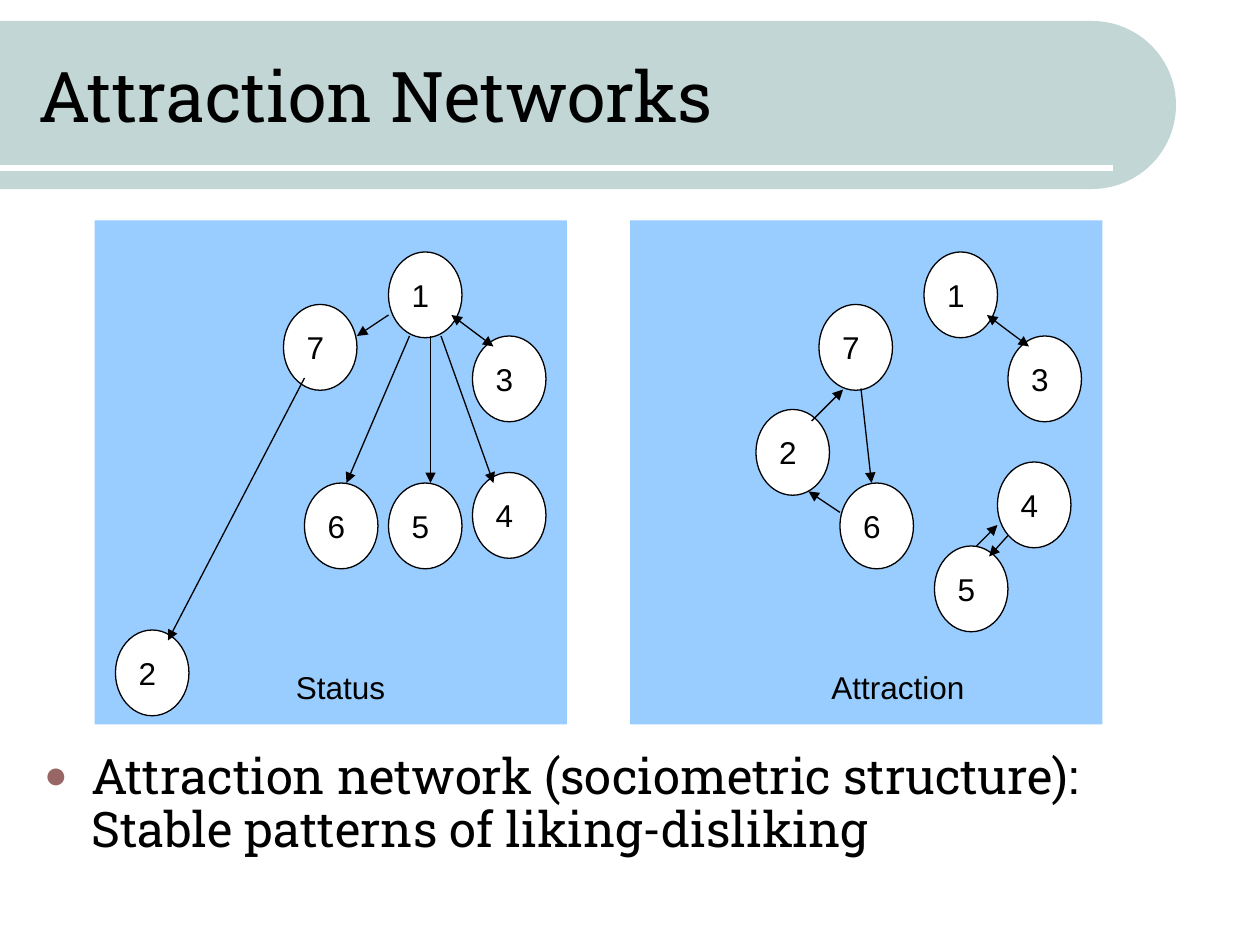
from math import cos, pi, sin
from lxml.etree import SubElement
from pptx import Presentation
from pptx.dml.color import RGBColor
from pptx.enum.shapes import MSO_CONNECTOR, MSO_SHAPE
from pptx.enum.text import MSO_ANCHOR, MSO_AUTO_SIZE, PP_ALIGN
from pptx.oxml.ns import qn
from pptx.util import Pt

# Content: places are in grid units, from the corner of each panel
TITLE = "Attraction Networks"
BODY = "Attraction network (sociometric structure): Stable patterns of liking-disliking"
PANELS = [
    {"label": "Status", "left": 54, "wide": 19,
     "nodes": {"7": (18, 8), "1": (28, 3), "2": (2, 39), "3": (36, 11),
               "4": (36, 24), "5": (28, 25), "6": (20, 25)},
     "one_way": [(28, 9, 25, 11), (30, 11, 24, 25), (32, 11, 32, 25),
                 (33, 11, 38, 25), (20, 15, 7, 40)],
     "mutual": [(34, 9, 38, 12)]},
    {"label": "Attraction", "left": 360, "wide": 22,
     "nodes": {"7": (18, 8), "1": (28, 3), "2": (12, 18), "3": (36, 11),
               "4": (35, 23), "5": (29, 31), "6": (20, 25)},
     "one_way": [(22, 16, 23, 25), (20, 27.8, 17, 25.8), (33, 31, 35, 29),
                 (17.3, 19.1, 20.3, 16.1), (36, 30, 34.2, 32)],
     "mutual": [(34, 9, 38, 12)]},
]
COLORS = {"bar": "C2D6D6", "panel": "99CCFF", "white": "FFFFFF",
          "black": "000000", "bullet": "996666"}
UNIT, TOP = 6, 126
HEAD, SANS = "Roboto Slab", "Arial"


def color(name):
    return RGBColor.from_string(COLORS[name])


def paint(shape, fill, line=None):
    shape.shadow.inherit = False
    shape.fill.solid()
    shape.fill.fore_color.rgb = color(fill)
    if line:
        shape.line.color.rgb = color(line)
        shape.line.width = Pt(0.75)
    else:
        shape.line.fill.background()


def write(shape, text, size, font):
    para = shape.text_frame.paragraphs[0]
    para.text = text
    para.alignment = PP_ALIGN.LEFT
    para.font.size, para.font.name = Pt(size), font
    para.font.color.rgb = color("black")
    return para


def place(shape, left, top, width, height):
    shape.left, shape.top = Pt(left), Pt(top)
    shape.width, shape.height = Pt(width), Pt(height)


def link(ends, tint, width, heads=()):
    line = slide.shapes.add_connector(MSO_CONNECTOR.STRAIGHT, *map(Pt, ends))
    line.line.color.rgb = color(tint)
    line.line.width = Pt(width)
    for tag in heads:
        SubElement(line.line._get_or_add_ln(), qn(tag), type="triangle")
    SubElement(line._element.spPr, qn("a:effectLst"))
    return line


def draw(panel):
    def spot(x, y):
        return panel["left"] + x * UNIT, TOP + y * UNIT

    add = slide.shapes.add_shape
    back = add(MSO_SHAPE.RECTANGLE, Pt(panel["left"]), Pt(TOP), Pt(270), Pt(288))
    paint(back, "panel")
    for name, at in panel["nodes"].items():
        node = add(MSO_SHAPE.OVAL, *map(Pt, spot(*at)), Pt(42), Pt(49))
        paint(node, "white", "black")
        node.text_frame.vertical_anchor = MSO_ANCHOR.MIDDLE
        write(node, name, 18, SANS)
    for key, heads in (("one_way", ["a:tailEnd"]),
                       ("mutual", ["a:headEnd", "a:tailEnd"])):
        for x1, y1, x2, y2 in panel[key]:
            link(spot(x1, y1) + spot(x2, y2), "black", 0.75, heads)
    label = slide.shapes.add_textbox(*map(Pt, spot(18, 42)),
                                     Pt(panel["wide"] * UNIT), Pt(36))
    label.text_frame.word_wrap = True
    write(label, panel["label"], 18, SANS)


deck = Presentation()
deck.slide_width, deck.slide_height = Pt(720), Pt(540)
slide = deck.slides.add_slide(deck.slide_layouts[1])

# Title bar with a round right end, and its rule, behind the title
steps = 48
arc = [(624 + 48 * sin(pi * i / steps), 60 - 48 * cos(pi * i / steps))
       for i in range(steps + 1)]
pen = slide.shapes.build_freeform(0, Pt(12))
pen.add_line_segments([(Pt(x), Pt(y)) for x, y in arc] + [(0, Pt(108))])
bar = pen.convert_to_shape()
paint(bar, "bar")
rule = link((0, 96, 636, 96), "white", 3)
for depth, part in enumerate((bar, rule), 2):
    slide.shapes._spTree.insert(depth, part._element)

# Title and body
title, body = slide.placeholders
place(title, 15, 18, 631.5, 72)
title.text_frame.vertical_anchor = MSO_ANCHOR.MIDDLE
write(title, TITLE, 40, HEAD)

place(body, 18, 426, 606, 84)
para = write(body, BODY, 28, HEAD)
para.line_spacing, para.space_before = 0.9, Pt(5.6)
props = para._p.get_or_add_pPr()
props.set("marL", str(Pt(27)))
props.set("indent", str(-Pt(27)))
tint = SubElement(props, qn("a:buClr"))
SubElement(tint, qn("a:srgbClr"), val=COLORS["bullet"])
SubElement(props, qn("a:buSzPct"), val="80000")
SubElement(props, qn("a:buFont"), typeface=SANS)
SubElement(props, qn("a:buChar"), char="●")
props.append(props.find(qn("a:defRPr")))  # the schema wants it last
for part in (title, body):
    part.text_frame.auto_size = MSO_AUTO_SIZE.NONE

# Network panels
for panel in PANELS:
    draw(panel)

deck.save("out.pptx")
